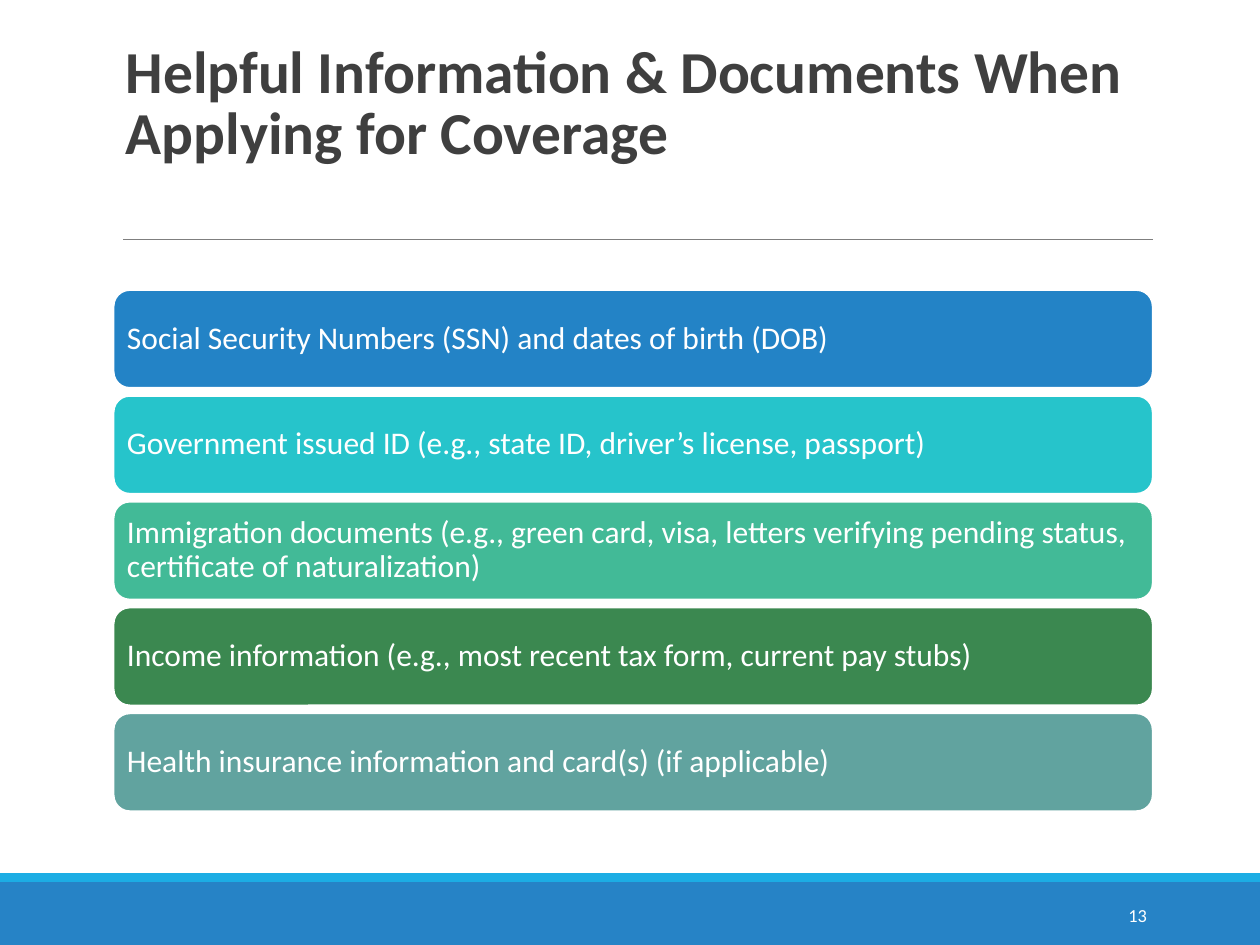
from pptx import Presentation
from pptx.dml.color import RGBColor
from pptx.enum import shapes, text
from pptx.oxml.ns import qn
from pptx.util import Inches, Pt
from lxml import etree

WHITE = RGBColor(0xFF, 0xFF, 0xFF)
DARK_GRAY = RGBColor(0x3F, 0x3F, 0x3F)
RULE_GRAY = RGBColor(0x7F, 0x7F, 0x7F)
FOOTER_BLUE = RGBColor(0x26, 0x83, 0xC6)
ACCENT_BLUE = RGBColor(0x1C, 0xAD, 0xE4)
BLUE = RGBColor(0x23, 0x83, 0xC6)
TURQUOISE = RGBColor(0x26, 0xC4, 0xCB)
MINT = RGBColor(0x42, 0xBA, 0x97)
GREEN = RGBColor(0x3B, 0x88, 0x50)
SAGE = RGBColor(0x61, 0xA3, 0x9F)


def add_block(kind, left, top, width, height, color):
    block = slide.shapes.add_shape(
        kind, Inches(left), Inches(top), Inches(width), Inches(height))
    block.shadow.inherit = False
    block.fill.solid()
    block.fill.fore_color.rgb = color
    block.line.fill.background()
    return block


def write(frame, words, size, color, anchor, align, spacing=1.0, bold=False):
    frame.word_wrap = True
    frame.vertical_anchor = anchor
    paragraph = frame.paragraphs[0]
    paragraph.alignment = align
    paragraph.line_spacing = spacing
    run = paragraph.add_run()
    run.text = words
    run.font.name = "Calibri"
    run.font.size = Pt(size)
    run.font.bold = bold
    run.font.color.rgb = color


prs = Presentation()
prs.slide_width, prs.slide_height = Inches(10), Inches(7.5)
slide = prs.slides.add_slide(prs.slide_layouts[6])

# Footer band with its accent strip
add_block(shapes.MSO_SHAPE.RECTANGLE, 0, 7, 10, 0.5, FOOTER_BLUE)
add_block(shapes.MSO_SHAPE.RECTANGLE, 0, 6.93, 10, 0.07, ACCENT_BLUE)

# Rule under the title
rule = slide.shapes.add_connector(
    shapes.MSO_CONNECTOR.STRAIGHT,
    Inches(0.98), Inches(1.9), Inches(9.15), Inches(1.9))
rule.line.color.rgb = RULE_GRAY
rule.line.width = Pt(0.75)
etree.SubElement(rule._element.spPr, qn("a:effectLst"))

# Title
title = slide.shapes.add_textbox(
    Inches(0.9), Inches(0.31), Inches(8.25), Inches(1.59))
write(title.text_frame,
      "Helpful Information & Documents When Applying for Coverage",
      34, DARK_GRAY, text.MSO_ANCHOR.TOP, text.PP_ALIGN.LEFT, 0.85, True)

# Document bars, evenly stacked
documents = [
    ("Social Security Numbers (SSN) and dates of birth (DOB)", BLUE),
    ("Government issued ID (e.g., state ID, driver’s license, passport)",
     TURQUOISE),
    ("Immigration documents (e.g., green card, visa, letters verifying "
     "pending status, certificate of naturalization)", MINT),
    ("Income information (e.g., most recent tax form, current pay stubs)",
     GREEN),
    ("Health insurance information and card(s) (if applicable)", SAGE),
]
for row, (words, color) in enumerate(documents):
    bar = add_block(shapes.MSO_SHAPE.ROUNDED_RECTANGLE,
                    0.9, 2.3 + row * 0.84, 8.25, 0.78, color)
    bar.line.color.rgb = WHITE
    bar.line.width = Pt(1.25)
    frame = bar.text_frame
    frame.margin_left = frame.margin_right = Inches(0.07)
    frame.margin_top = frame.margin_bottom = Inches(0.07)
    write(frame, words, 18, WHITE,
          text.MSO_ANCHOR.MIDDLE, text.PP_ALIGN.LEFT, 0.9)

# Page number
page_number = slide.shapes.add_textbox(
    Inches(8.12), Inches(7.06), Inches(1.08), Inches(0.4))
write(page_number.text_frame, "13", 10.5, WHITE,
      text.MSO_ANCHOR.MIDDLE, text.PP_ALIGN.RIGHT)

prs.save("out.pptx")
